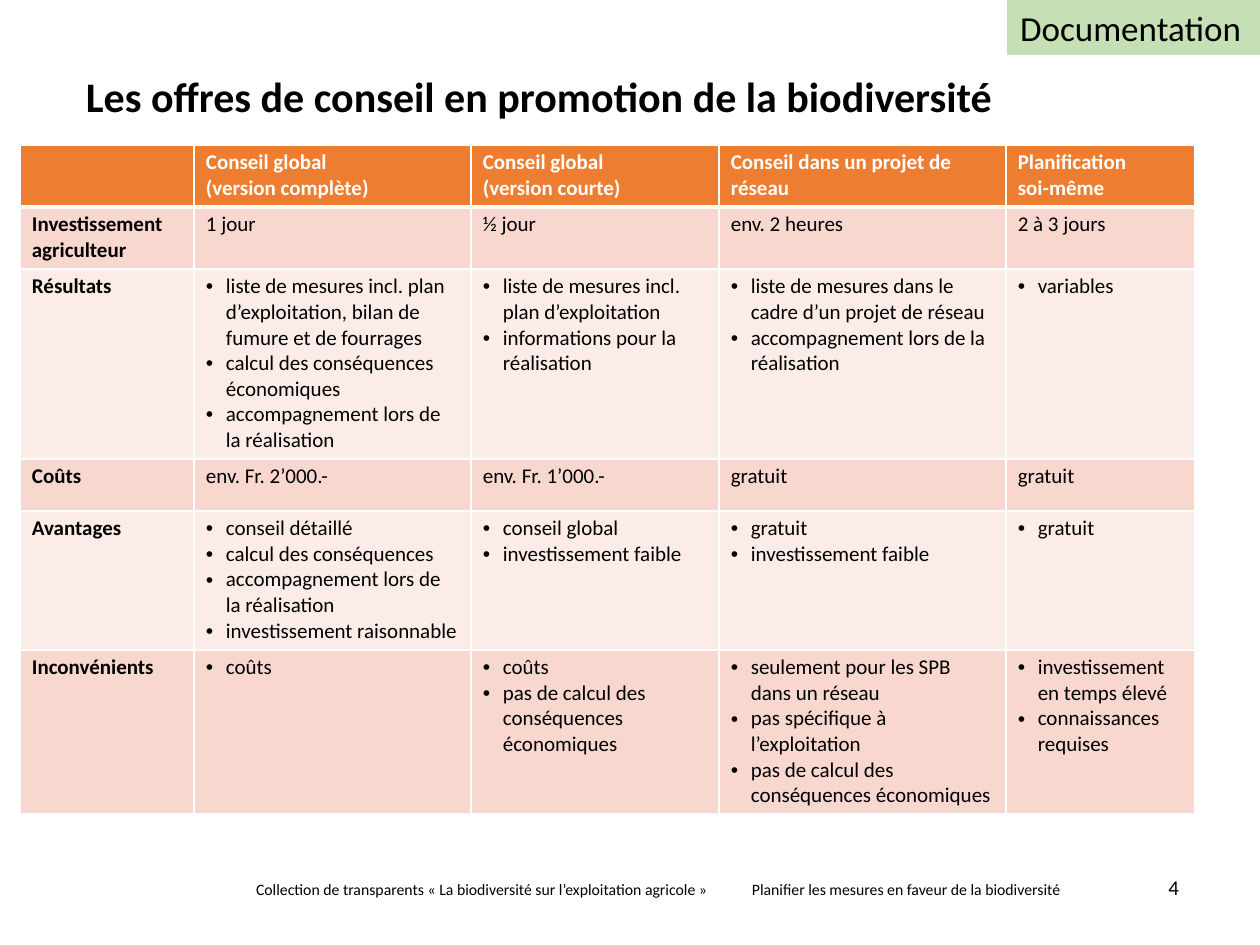
"""Build the slide comparing advisory offers for promoting biodiversity."""
from copy import deepcopy
from dataclasses import dataclass

from lxml import etree
from pptx import Presentation
from pptx.dml.color import RGBColor
from pptx.enum.shapes import MSO_SHAPE
from pptx.enum.text import MSO_ANCHOR, PP_ALIGN
from pptx.oxml.ns import qn
from pptx.util import Emu, Pt

RECTANGLE = MSO_SHAPE.RECTANGLE
TOP, BOTTOM = MSO_ANCHOR.TOP, MSO_ANCHOR.BOTTOM
LEFT, RIGHT = PP_ALIGN.LEFT, PP_ALIGN.RIGHT

BLACK = RGBColor(0x00, 0x00, 0x00)
WHITE = RGBColor(0xFF, 0xFF, 0xFF)
ORANGE = RGBColor(0xED, 0x7D, 0x31)
SALMON = RGBColor(0xF8, 0xD7, 0xCE)
PALE_SALMON = RGBColor(0xFC, 0xEC, 0xE8)
GREEN = RGBColor(0xC5, 0xE0, 0xB4)

FONT = "Calibri"
EMU_PER_PX = 914400 / 126
BULLET_INDENT = 20
CELL_MARGIN_X, CELL_MARGIN_Y = 12, 5
THIN, THICK = 1, 3


@dataclass(frozen=True)
class Label:
    text: str
    box: tuple[int, int, int, int]
    size: int
    bold: bool = False
    align: PP_ALIGN = LEFT
    anchor: MSO_ANCHOR = TOP
    margins: tuple[int, int] = (13, 6)
    line_spacing: float | None = None
    fill: RGBColor | None = None


@dataclass(frozen=True)
class Criterion:
    name: str
    height: int
    offers: tuple[tuple[str, ...], ...]
    bulleted: bool = True


LABELS = (
    Label("Collection de transparents « La biodiversité sur l’exploitation agricole »",
          (243, 874, 486, 32), 9),
    Label("Planifier les mesures en faveur de la biodiversité", (739, 874, 338, 32), 9),
    Label("4", (1067, 857, 112, 49), 12, align=RIGHT, anchor=BOTTOM, margins=(0, 6)),
    Label("Documentation", (1007, 0, 258, 55), 20, fill=GREEN),
    Label("Les offres de conseil en promotion de la biodiversité", (86, 76, 1120, 67), 24,
          bold=True, margins=(0, 0), line_spacing=0.9),
)

TABLE_LEFT, TABLE_TOP = 20, 145
COLUMN_WIDTHS = (174, 277, 248, 287, 189)
HEADER_HEIGHT = 62
HEADINGS = (
    "",
    "Conseil global \v(version complète)",
    "Conseil global \v(version courte)",
    "Conseil dans un projet de réseau",
    "Planification \vsoi-même",
)
CRITERIA = (
    Criterion("Investissement agriculteur", 62,
              (("1 jour",), ("½ jour",), ("env. 2 heures",), ("2 à 3 jours",)), bulleted=False),
    Criterion("Résultats", 190, (
        ("liste de mesures incl. plan d’exploitation, bilan de fumure et de fourrages",
         "calcul des conséquences économiques",
         "accompagnement lors de la réalisation"),
        ("liste de mesures incl. plan d’exploitation", "informations pour la réalisation"),
        ("liste de mesures dans le cadre d’un projet de réseau",
         "accompagnement lors de la réalisation"),
        ("variables",),
    )),
    Criterion("Coûts", 52,
              (("env. Fr. 2’000.-",), ("env. Fr. 1’000.-",), ("gratuit",), ("gratuit",)),
              bulleted=False),
    Criterion("Avantages", 139, (
        ("conseil détaillé", "calcul des conséquences",
         "accompagnement lors de la réalisation", "investissement raisonnable"),
        ("conseil global", "investissement faible"),
        ("gratuit", "investissement faible"),
        ("gratuit",),
    )),
    Criterion("Inconvénients", 164, (
        ("coûts",),
        ("coûts", "pas de calcul des conséquences économiques"),
        ("seulement pour les SPB dans un réseau", "pas spécifique à l’exploitation",
         "pas de calcul des conséquences économiques"),
        ("investissement en temps élevé", "connaissances requises"),
    )),
)


def px(length: int) -> Emu:
    return Emu(round(length * EMU_PER_PX))


def write(frame, lines, *, size=12, color=BLACK, bold=False, align=LEFT,
          line_spacing=None, bulleted=False) -> None:
    for index, line in enumerate(lines):
        paragraph = frame.add_paragraph() if index else frame.paragraphs[0]
        paragraph.text = line
        paragraph.alignment = align
        if line_spacing:
            paragraph.line_spacing = line_spacing
        if bulleted:
            properties = paragraph._p.get_or_add_pPr()
            properties.set("marL", str(px(BULLET_INDENT)))
            properties.set("indent", str(-px(BULLET_INDENT)))
            etree.SubElement(properties, qn("a:buFont"), typeface="Arial")
            etree.SubElement(properties, qn("a:buChar"), char="•")
        for run in paragraph.runs:
            run.font.name = FONT
            run.font.size = Pt(size)
            run.font.bold = bold
            run.font.color.rgb = color
        for line_break in paragraph._p.findall(qn("a:br")):
            line_break.insert(0, deepcopy(paragraph._p.find(qn("a:r")).find(qn("a:rPr"))))


def add_label(slide, label: Label) -> None:
    box = [px(length) for length in label.box]
    if label.fill is None:
        shape = slide.shapes.add_textbox(*box)
    else:
        shape = slide.shapes.add_shape(RECTANGLE, *box)
        shape.shadow.inherit = False
        shape.fill.solid()
        shape.fill.fore_color.rgb = label.fill
        shape.line.fill.background()
    frame = shape.text_frame
    frame.word_wrap = True
    frame.vertical_anchor = label.anchor
    frame.margin_left = frame.margin_right = px(label.margins[0])
    frame.margin_top = frame.margin_bottom = px(label.margins[1])
    write(frame, [label.text], size=label.size, bold=label.bold, align=label.align,
          line_spacing=label.line_spacing)


def style_cell(cell, fill: RGBColor, top: int = THIN, bottom: int = THIN) -> None:
    properties = cell._tc.get_or_add_tcPr()
    for side, width in (("L", THIN), ("R", THIN), ("T", top), ("B", bottom)):
        border = etree.SubElement(properties, qn(f"a:ln{side}"), w=str(Pt(width)))
        solid = etree.SubElement(border, qn("a:solidFill"))
        etree.SubElement(solid, qn("a:srgbClr"), val=str(WHITE))
    cell.fill.solid()
    cell.fill.fore_color.rgb = fill
    cell.margin_left = cell.margin_right = px(CELL_MARGIN_X)
    cell.margin_top = cell.margin_bottom = px(CELL_MARGIN_Y)


def add_offer_table(slide) -> None:
    heights = [HEADER_HEIGHT, *(criterion.height for criterion in CRITERIA)]
    table = slide.shapes.add_table(
        len(heights), len(COLUMN_WIDTHS), px(TABLE_LEFT), px(TABLE_TOP),
        px(sum(COLUMN_WIDTHS)), px(sum(heights))).table
    table.horz_banding = False
    for column, width in zip(table.columns, COLUMN_WIDTHS):
        column.width = px(width)
    for row, height in zip(table.rows, heights):
        row.height = px(height)

    for column, heading in enumerate(HEADINGS):
        cell = table.cell(0, column)
        style_cell(cell, ORANGE, bottom=THICK)
        write(cell.text_frame, [heading], color=WHITE, bold=True)
    for row, criterion in enumerate(CRITERIA, start=1):
        for column, lines in enumerate(((criterion.name,), *criterion.offers)):
            cell = table.cell(row, column)
            style_cell(cell, SALMON if row % 2 else PALE_SALMON,
                       top=THICK if row == 1 else THIN)
            write(cell.text_frame, lines, bold=column == 0,
                  bulleted=criterion.bulleted and column > 0)


def main() -> None:
    presentation = Presentation()
    presentation.slide_width, presentation.slide_height = px(1260), px(945)
    slide = presentation.slides.add_slide(presentation.slide_layouts[6])
    add_offer_table(slide)
    for label in LABELS:
        add_label(slide, label)
    presentation.save("out.pptx")


if __name__ == "__main__":
    main()
